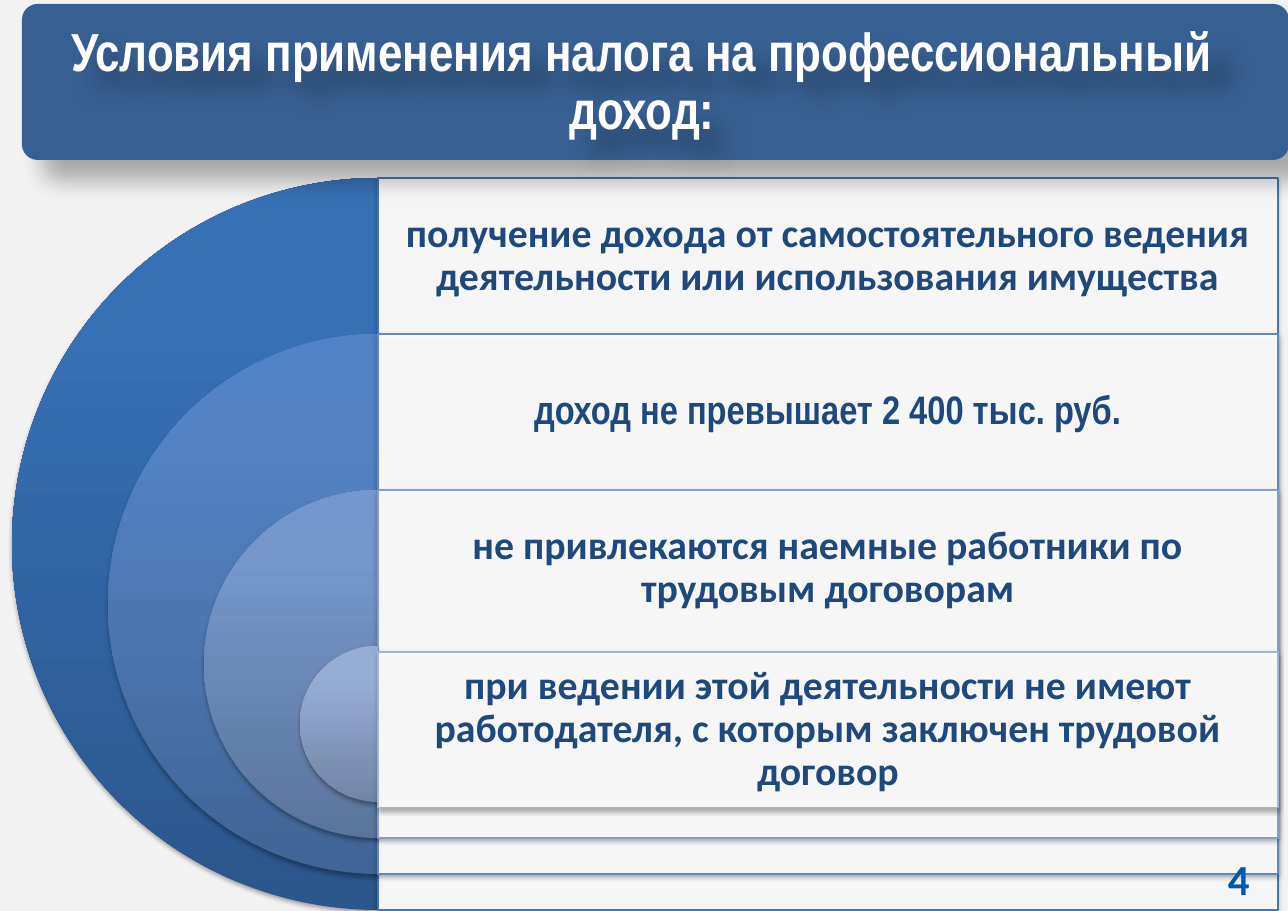
from copy import deepcopy

from lxml import etree
from pptx import Presentation
from pptx.dml.color import RGBColor
from pptx.enum.shapes import MSO_SHAPE
from pptx.enum.text import MSO_ANCHOR, MSO_AUTO_SIZE, PP_ALIGN
from pptx.oxml.ns import qn
from pptx.util import Pt

PX = 8298  # EMU in one px
PIE, RECT, ROUNDED = MSO_SHAPE.PIE, MSO_SHAPE.RECTANGLE, MSO_SHAPE.ROUNDED_RECTANGLE
CENTER, LEFT, MIDDLE = PP_ALIGN.CENTER, PP_ALIGN.LEFT, MSO_ANCHOR.MIDDLE
NO_AUTOFIT = MSO_AUTO_SIZE.NONE

COLORS = {
    "page": "F2F2F2",
    "banner": "376092",
    "white": "FFFFFF",
    "text": "1F497D",
    "number": "005AA9",
    "shadow": "000000",
}

# text, font, gradient from bottom to top, outline
CONDITIONS = [
    ("получение дохода от самостоятельного ведения деятельности или использования имущества",
     "Calibri", ("2A568B", "3770B5", "3570B8"), "4875AC"),
    ("доход не превышает 2 400 тыс. руб.",
     "Arial Narrow", ("406596", "5383C3", "5283C6"), "6389BC"),
    ("не привлекаются наемные работники по трудовым договорам",
     "Calibri", ("5A749C", "7597CB", "7498CE"), "839EC7"),
    ("при ведении этой деятельности не имеют работодателя, с которым заключен трудовой договор",
     "Calibri", ("7385A4", "96ADD5", "95ADD7"), "A2B4D4"),
]
STOPS = (0, 0.8, 1)
TOP, ROW, AXIS, PANEL_WIDTH = 178, 156, 378, 900
OUTER_DIAMETER, DIAMETER_STEP = 732, 192
LAST_PANEL_TOP = 652


def add_shadow(shape, alpha, blur, distance, angle):
    """Add an outer shadow: alpha in percent, lengths in points, angle in degrees."""
    effects = etree.SubElement(shape.element.spPr, qn("a:effectLst"))
    outer = etree.SubElement(
        effects, qn("a:outerShdw"), blurRad=str(Pt(blur)), dist=str(Pt(distance)),
        dir=str(angle * 60000), algn="ctr", rotWithShape="0")
    color = etree.SubElement(outer, qn("a:srgbClr"), val=COLORS["shadow"])
    etree.SubElement(color, qn("a:alpha"), val=str(alpha * 1000))


def write_text(shape, text, font, size, color, insets, align=CENTER, spacing=0.9):
    """Write one bold paragraph; insets are left, top, right, bottom in px."""
    frame = shape.text_frame
    frame.word_wrap = True
    frame.auto_size = NO_AUTOFIT
    frame.vertical_anchor = MIDDLE
    (frame.margin_left, frame.margin_top,
     frame.margin_right, frame.margin_bottom) = [inset * PX for inset in insets]
    para = frame.paragraphs[0]
    para.alignment = align
    para.line_spacing = spacing
    span = para.add_run()
    span.text = text
    span.font.name = font
    span.font.size = Pt(size)
    span.font.bold = True
    span.font.color.rgb = RGBColor.from_string(color)


deck = Presentation()
deck.slide_width, deck.slide_height = 1288 * PX, 911 * PX
page = deck.slides.add_slide(deck.slide_layouts[5])
page.background.fill.solid()
page.background.fill.fore_color.rgb = RGBColor.from_string(COLORS["page"])
shapes = page.shapes

# Nested half discs, each with its panel and condition
for index, (text, font, gradient, outline) in enumerate(CONDITIONS):
    diameter = OUTER_DIAMETER - index * DIAMETER_STEP
    top = TOP + index * ROW
    disc = shapes.add_shape(PIE, (AXIS - diameter // 2) * PX, top * PX,
                            diameter * PX, diameter * PX)
    disc.adjustments[0], disc.adjustments[1] = 54, 162
    disc.fill.gradient()
    disc.fill.gradient_angle = 90
    last_stop = disc.element.spPr.findall(".//" + qn("a:gs"))[-1]
    last_stop.addnext(deepcopy(last_stop))
    for stop, position, color in zip(disc.fill.gradient_stops, STOPS, gradient):
        stop.position = position
        stop.color.rgb = RGBColor.from_string(color)
    disc.line.fill.background()
    add_shadow(disc, 35, 3.1, 1.8, 90)

    panel_top = LAST_PANEL_TOP if index == len(CONDITIONS) - 1 else top
    panel = shapes.add_shape(RECT, AXIS * PX, panel_top * PX,
                             PANEL_WIDTH * PX, diameter * PX)
    panel.fill.solid()
    panel.fill.fore_color.rgb = RGBColor.from_string(COLORS["white"])
    panel_color = panel.element.spPr.find(qn("a:solidFill")).find(qn("a:srgbClr"))
    etree.SubElement(panel_color, qn("a:alpha"), val="90000")
    panel.line.color.rgb = RGBColor.from_string(outline)
    panel.line.width = Pt(0.75)
    add_shadow(panel, 35, 3.1, 1.8, 90)

    condition = shapes.add_textbox(AXIS * PX, panel_top * PX, PANEL_WIDTH * PX, ROW * PX)
    write_text(condition, text, font, 26, COLORS["text"], (12, 12, 12, 12))

# Banner with the title on top of it
banner = shapes.add_shape(ROUNDED, 22 * PX, 4 * PX, 1267 * PX, 156 * PX)
banner.adjustments[0] = 0.1
banner.fill.solid()
banner.fill.fore_color.rgb = RGBColor.from_string(COLORS["banner"])
banner.line.fill.background()
add_shadow(banner, 30, 15, 18, 45)

title = shapes.title
title.left, title.top, title.width, title.height = 0, 9 * PX, 1284 * PX, 148 * PX
write_text(title, "Условия применения налога на профессиональный доход:",
           "Arial Narrow", 35, COLORS["white"], (17, 17, 17, 17))
add_shadow(title, 30, 15, 18, 45)
banner.element.addnext(title.element)

number = shapes.add_textbox(1200 * PX, 855 * PX, 67 * PX, 56 * PX)
write_text(number, "4", "Calibri", 28, COLORS["number"], (28, 7, 12, 7), LEFT, 0.8)

deck.save("out.pptx")
